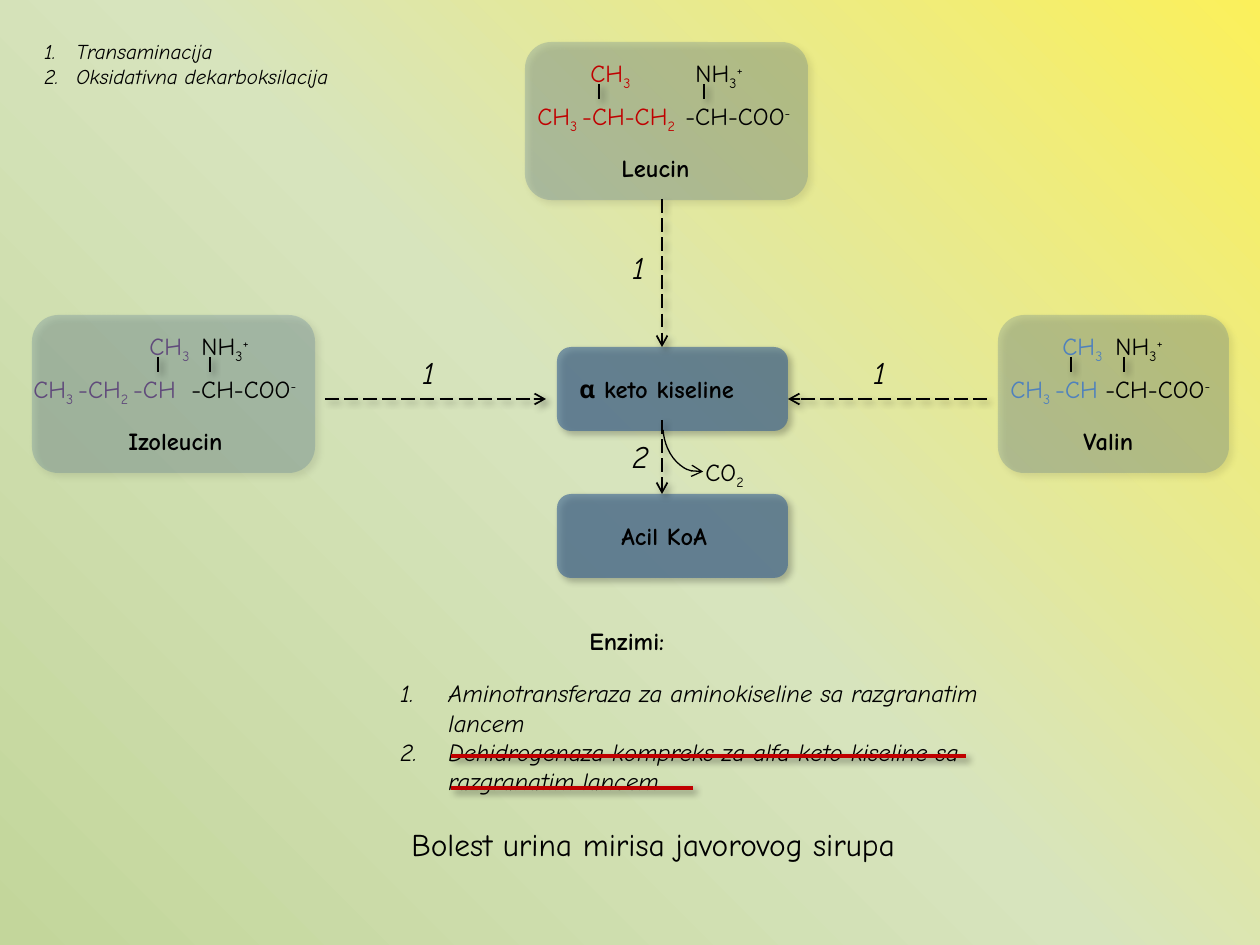
from copy import deepcopy
from dataclasses import dataclass

from lxml.etree import SubElement
from pptx import Presentation
from pptx.dml.color import RGBColor
from pptx.enum.dml import MSO_LINE
from pptx.enum.shapes import MSO_CONNECTOR, MSO_SHAPE
from pptx.enum.text import MSO_AUTO_SIZE
from pptx.oxml.ns import qn
from pptx.util import Emu, Pt

SCALE = 914400 / 126


def px(n):
    return Emu(round(n * SCALE))


def rgb(code):
    return RGBColor.from_string(code)


@dataclass(frozen=True)
class Theme:
    font: str = "Comic Neue"
    ink: str = "000000"
    box: str = "376092"
    red: str = "C00000"
    plum: str = "604A7B"
    blue: str = "4F81BD"
    back: tuple = ("C3D69B", "D7E4BD", "FBF05B")
    small: int = 12
    body: int = 14
    large: int = 18


class Board:
    def __init__(self, deck, theme):
        self.theme = theme
        self.slide = deck.slides.add_slide(deck.slide_layouts[6])
        self.spot = self.slide.shapes

    def paint(self):
        fill = self.slide.background.fill
        fill.gradient()
        fill.gradient_angle = 45
        stops = next(self.slide.element.iter(qn("a:gsLst")))
        stops.append(deepcopy(stops[0]))
        for i, (stop, code) in enumerate(zip(fill.gradient_stops, self.theme.back)):
            stop.position = i / 2
            stop.color.rgb = rgb(code)

    def shade(self, item, deep=True):
        effect = SubElement(item.element.spPr, qn("a:effectLst"))
        if deep:
            cast = SubElement(effect, qn("a:outerShdw"), blurRad=str(Pt(4)), dist=str(Pt(3)),
                              dir="2700000", algn="tl", rotWithShape="0")
            tint = SubElement(cast, qn("a:srgbClr"), val=self.theme.ink)
            SubElement(tint, qn("a:alpha"), val="40000")

    def box(self, x, y, w, h, alpha):
        item = self.spot.add_shape(MSO_SHAPE.ROUNDED_RECTANGLE, px(x), px(y), px(w), px(h))
        item.fill.solid()
        item.fill.fore_color.rgb = rgb(self.theme.box)
        tint = next(item.element.spPr.iter(qn("a:srgbClr")))
        SubElement(tint, qn("a:alpha"), val=str(alpha * 1000))
        item.line.fill.background()
        self.shade(item)

    def line(self, x1, y1, x2, y2, color=None, width=1.25):
        item = self.spot.add_connector(MSO_CONNECTOR.STRAIGHT, px(x1), px(y1), px(x2), px(y2))
        item.line.color.rgb = rgb(color or self.theme.ink)
        item.line.width = Pt(width)
        self.shade(item)
        return item

    def arrow(self, *ends):
        item = self.line(*ends, width=1)
        item.line.dash_style = MSO_LINE.LONG_DASH
        SubElement(item.line._ln, qn("a:tailEnd"), type="arrow")

    def arc(self, x, y, w, h):
        item = self.spot.add_shape(MSO_SHAPE.ARC, px(x), px(y), px(w), px(h))
        item.rotation = 1
        item.adjustments[0], item.adjustments[1] = 50.66, 103.23
        item.fill.background()
        item.line.color.rgb = rgb(self.theme.ink)
        item.line.width = Pt(0.75)
        SubElement(item.line._ln, qn("a:headEnd"), type="arrow")
        self.shade(item, deep=False)

    def text(self, x, y, w, h, *paras, size=None, color=None, bold=False,
             slant=False, wrap=False, dent=0):
        frame = self.spot.add_textbox(px(x), px(y), px(w), px(h)).text_frame
        frame.word_wrap = wrap
        frame.auto_size = MSO_AUTO_SIZE.SHAPE_TO_FIT_TEXT
        for i, runs in enumerate(paras):
            para = frame.add_paragraph() if i else frame.paragraphs[0]
            if dent:
                props = para._p.get_or_add_pPr()
                props.set("marL", str(px(dent)))
                props.set("indent", str(px(-dent)))
                SubElement(props, qn("a:buFont"), typeface=self.theme.font)
                SubElement(props, qn("a:buAutoNum"), type="arabicPeriod")
            for part in runs:
                run = para.add_run()
                run.text = part.lstrip("_^")
                font = run.font
                font.name = self.theme.font
                font.size = Pt(size or self.theme.body)
                font.color.rgb = rgb(color or self.theme.ink)
                font.bold, font.italic = bold, slant
                shift = {"_": "-25000", "^": "30000"}.get(part[0])
                if shift:
                    run._r.get_or_add_rPr().set("baseline", shift)

    def acid(self, x, y, w, name, chain, color, stem, amine):
        label, left, wide = name
        start, span, runs = chain
        self.spot = self.slide.shapes.add_group_shape().shapes
        self.box(x, y, w, 158, 22)
        self.text(x + left, y + 105, wide, 43, [label], bold=True)
        self.text(x + start, y + 53, span, 62, runs, color=color, wrap=True)
        self.text(x + amine - 31, y + 53, 141, 43, ["-CH-COO", "^-"])
        self.text(x + amine - 21, y + 10, 82, 43, ["NH", "_3", "^+"])
        self.text(x + stem - 21, y + 10, 69, 43, ["CH", "_3"], color=color)
        for spot in (amine, stem):
            self.line(x + spot, y + 42, x + spot, y + 57)
        self.spot = self.slide.shapes


def main():
    deck = Presentation()
    deck.slide_width, deck.slide_height = px(1260), px(945)
    theme = Theme()
    board = Board(deck, theme)
    board.paint()

    board.box(557, 347, 231, 84, 60)
    board.acid(32, 315, 283, ("Izoleucin", 84, 131),
               (-11, 189, ["CH", "_3 ", "-CH", "_2 ", "-CH"]), theme.plum, 126, 178)
    board.acid(998, 315, 231, ("Valin", 73, 83),
               (0, 136, ["CH", "_3 ", "-CH"]), theme.blue, 73, 126)
    board.acid(525, 42, 283, ("Leucin", 84, 98),
               (0, 189, ["CH", "_3 ", "-CH-CH", "_2"]), theme.red, 74, 179)

    board.arrow(325, 399, 546, 399)
    board.arrow(987, 399, 788, 399)
    board.arrow(662, 199, 662, 347)
    board.arc(663, 379, 73, 93)
    board.text(693, 451, 71, 43, ["CO", "_2"])

    board.text(32, 32, 347, 64, ["Transaminacija"], ["Oksidativna dekarboksilacija"],
               size=theme.small, slant=True, wrap=True, dent=32)
    board.text(388, 672, 609, 131,
               ["Aminotransferaza za aminokiseline sa razgranatim lancem"],
               ["Dehidrogenaza kompreks za alfa keto kiseline sa razgranatim lancem"],
               slant=True, wrap=True, dent=48)
    board.text(577, 620, 111, 43, ["Enzimi:"], bold=True)
    board.text(399, 819, 557, 50, ["Bolest urina mirisa javorovog sirupa"],
               size=theme.large, wrap=True)
    for end, y in ((966, 756), (693, 788)):
        board.line(end, y, 451, y, theme.red, 2.25)

    board.text(567, 368, 199, 43, ["α keto kiseline"], bold=True)
    board.box(557, 494, 231, 84, 60)
    board.text(609, 515, 127, 43, ["Acil KoA"], bold=True)
    board.arrow(662, 420, 662, 494)
    for x, y, step in ((410, 347, "1"), (620, 242, "1"), (861, 347, "1"), (620, 431, "2")):
        board.text(x, y, 42, 50, [step], size=theme.large, slant=True)

    deck.save("out.pptx")


if __name__ == "__main__":
    main()
